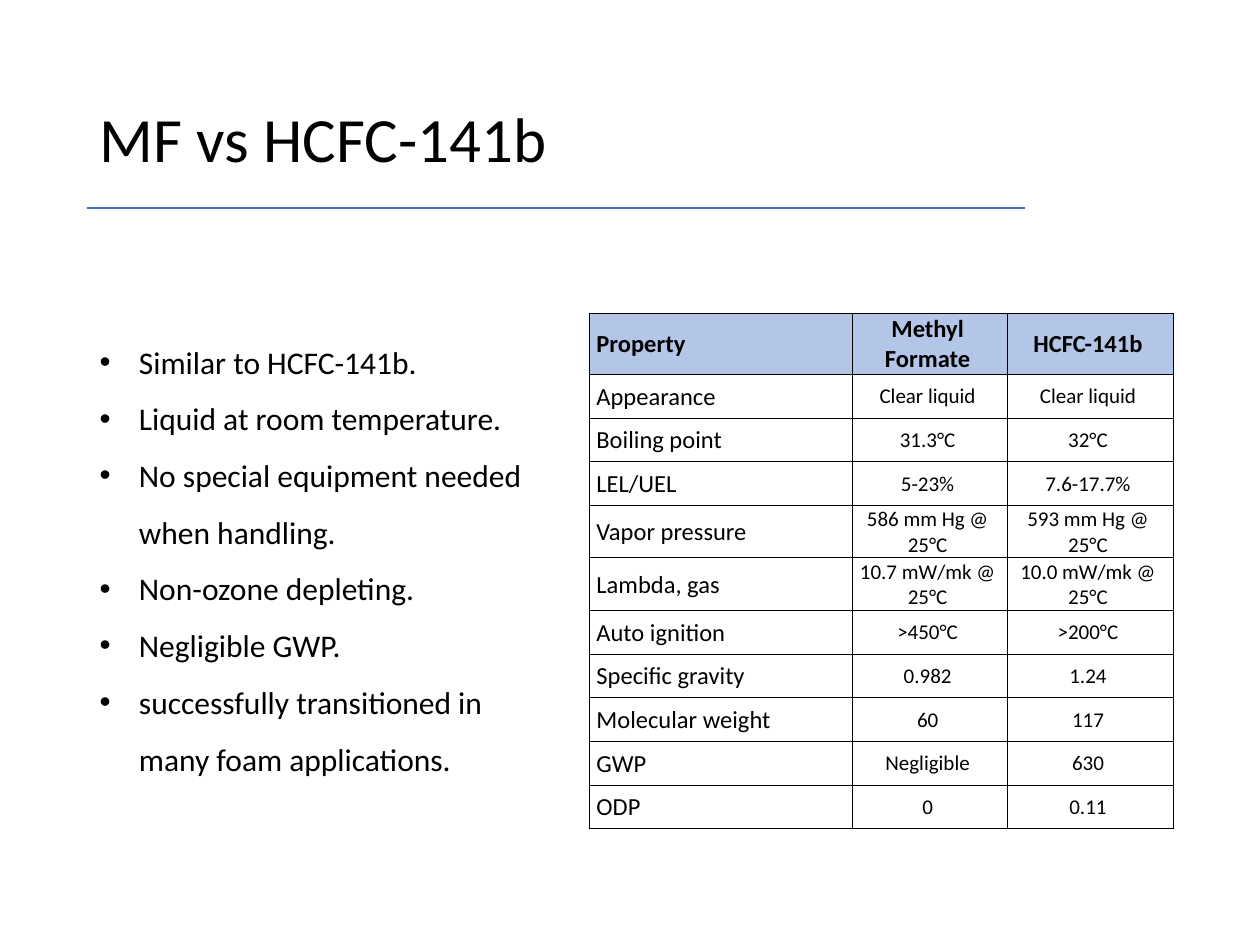
import pptx
import pptx.util
import pptx.dml.color
import pptx.enum.shapes
import pptx.enum.text
import pptx.oxml
import pptx.oxml.ns

Pt = pptx.util.Pt
RGBColor = pptx.dml.color.RGBColor
ALIGN = pptx.enum.text.PP_ALIGN
MIDDLE = pptx.enum.text.MSO_ANCHOR.MIDDLE

BLACK = RGBColor(0x00, 0x00, 0x00)
RULE_BLUE = RGBColor(0x44, 0x72, 0xC4)
HEADER_BLUE = RGBColor(0xB4, 0xC6, 0xE7)
FONT = "Calibri"
LEFT = 49.7

BULLETS = [
    "Similar to HCFC-141b.",
    "Liquid at room temperature.",
    "No special equipment needed when handling.",
    "Non-ozone depleting.",
    "Negligible GWP.",
    "successfully transitioned in many foam applications.",
]
PROPERTIES = [
    ("Property", "Methyl Formate", "HCFC-141b"),
    ("Appearance", "Clear liquid", "Clear liquid"),
    ("Boiling point", "31.3°C", "32°C"),
    ("LEL/UEL", "5-23%", "7.6-17.7%"),
    ("Vapor pressure", "586 mm Hg @ 25°C", "593 mm Hg @ 25°C"),
    ("Lambda, gas", "10.7 mW/mk @ 25°C", "10.0 mW/mk @ 25°C"),
    ("Auto ignition", ">450°C", ">200°C"),
    ("Specific gravity", "0.982", "1.24"),
    ("Molecular weight", "60", "117"),
    ("GWP", "Negligible", "630"),
    ("ODP", "0", "0.11"),
]
COLUMN_WIDTHS = [150.4, 88.6, 94.7]
HEADER_HEIGHT, ROW_HEIGHT = 34.8, 25


def add_run(p, text, size, bold=False):
    r = p.add_run()
    r.text = text
    r.font.name = FONT
    r.font.size = Pt(size)
    r.font.bold = bold
    r.font.color.rgb = BLACK


def add_borders(cell):
    tcPr = cell._tc.get_or_add_tcPr()
    for side in ("lnL", "lnR", "lnT", "lnB"):
        tcPr.append(pptx.oxml.parse_xml(
            f'<a:{side} {pptx.oxml.ns.nsdecls("a")} w="{Pt(0.5)}"><a:solidFill>'
            f'<a:srgbClr val="{BLACK}"/></a:solidFill></a:{side}>'))


prs = pptx.Presentation()
prs.slide_width, prs.slide_height = Pt(720), Pt(540)
s = prs.slides.add_slide(prs.slide_layouts[1])
title, body = s.placeholders

# Rule under the title
rule = s.shapes.add_connector(pptx.enum.shapes.MSO_CONNECTOR.STRAIGHT,
                              Pt(LEFT), Pt(118.8), Pt(586), Pt(118.8))
rule.line.color.rgb = RULE_BLUE
rule.line.width = Pt(1)
rule._element.spPr.append(pptx.oxml.parse_xml(
    f'<a:effectLst {pptx.oxml.ns.nsdecls("a")}/>'))

# Title
title.left, title.top, title.width, title.height = Pt(LEFT), Pt(28.8), Pt(620.6), Pt(104.4)
tf = title.text_frame
tf.auto_size = pptx.enum.text.MSO_AUTO_SIZE.NONE
tf.vertical_anchor = MIDDLE
p = tf.paragraphs[0]
p.alignment = ALIGN.LEFT
p.line_spacing = 0.9
add_run(p, "MF vs HCFC-141b", 36)

# Bullet list
body.left, body.top, body.width, body.height = Pt(LEFT), Pt(181.4), Pt(277.2), Pt(290.9)
tf = body.text_frame
tf.auto_size = pptx.enum.text.MSO_AUTO_SIZE.NONE
for i, text in enumerate(BULLETS):
    p = tf.add_paragraph() if i else tf.paragraphs[0]
    pPr = p._p.get_or_add_pPr()
    pPr.set("marL", str(Pt(22.5)))
    pPr.set("indent", str(-Pt(22.5)))
    p.line_spacing = 1.5
    p.space_before = Pt(0)
    add_run(p, text, 18)

# Property table
height = HEADER_HEIGHT + ROW_HEIGHT * (len(PROPERTIES) - 1)
table = s.shapes.add_table(len(PROPERTIES), len(COLUMN_WIDTHS), Pt(336.8), Pt(179.1),
                           Pt(sum(COLUMN_WIDTHS)), Pt(height)).table
table.horz_banding = False
for column, width in zip(table.columns, COLUMN_WIDTHS):
    column.width = Pt(width)
for i, values in enumerate(PROPERTIES):
    header = i == 0
    table.rows[i].height = Pt(HEADER_HEIGHT if header else ROW_HEIGHT)
    for j, text in enumerate(values):
        cell = table.cell(i, j)
        label = j == 0
        cell.margin_left = Pt(4 if label else 0.7)
        cell.margin_right = Pt(3.5)
        cell.margin_top, cell.margin_bottom = Pt(0.7), Pt(0)
        cell.vertical_anchor = MIDDLE
        add_borders(cell)
        if header:
            cell.fill.solid()
            cell.fill.fore_color.rgb = HEADER_BLUE
        else:
            cell.fill.background()
        p = cell.text_frame.paragraphs[0]
        p.alignment = ALIGN.LEFT if label else ALIGN.CENTER
        add_run(p, text, 14 if header or label else 12, bold=header)

prs.save("out.pptx")
